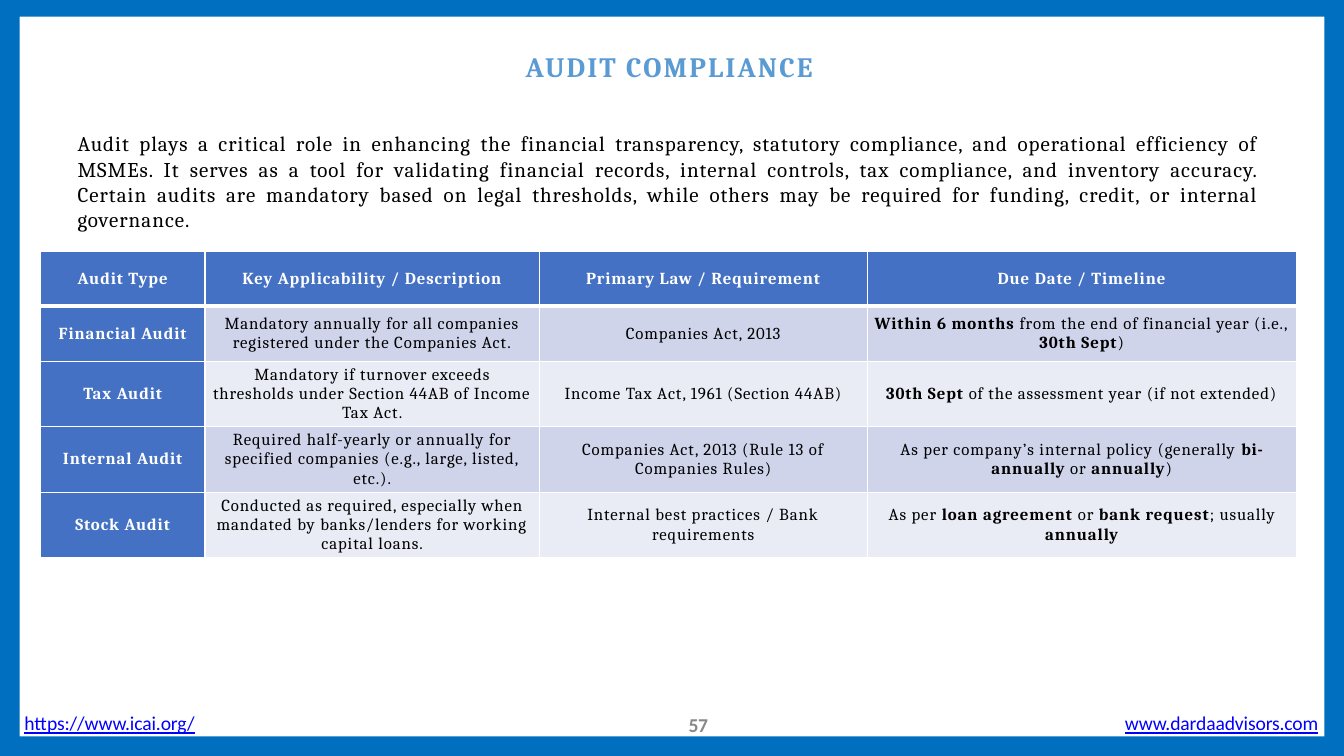
from dataclasses import dataclass

from lxml.etree import SubElement
from pptx import Presentation
from pptx.dml.color import RGBColor
from pptx.enum.shapes import MSO_SHAPE
from pptx.enum.text import MSO_ANCHOR, PP_ALIGN
from pptx.oxml.ns import qn
from pptx.shapes.autoshape import Shape
from pptx.slide import Slide
from pptx.table import _Cell
from pptx.text.text import _Paragraph
from pptx.util import Pt

FRAME_BLUE = RGBColor(0x00, 0x6F, 0xC0)
TITLE_BLUE = RGBColor(0x5B, 0x9B, 0xD4)
LINK_BLUE = RGBColor(0x00, 0x00, 0xFF)
HEADER_BLUE = RGBColor(0x44, 0x71, 0xC4)
BAND_DARK = RGBColor(0xCF, 0xD4, 0xEA)
BAND_LIGHT = RGBColor(0xE9, 0xEB, 0xF5)
GREY = RGBColor(0x88, 0x88, 0x88)
BLACK = RGBColor(0x00, 0x00, 0x00)
WHITE = RGBColor(0xFF, 0xFF, 0xFF)


@dataclass(frozen=True)
class Style:
    size: float
    color: RGBColor
    font: str = "Cambria"
    bold: bool = False
    underline: bool = False
    spacing: float = 0


@dataclass(frozen=True)
class Label:
    text: str
    left: float
    top: float
    width: float
    height: float
    style: Style
    align: PP_ALIGN = PP_ALIGN.LEFT
    wrap: bool = False
    line: float | None = None


LINK = Style(14, LINK_BLUE, "Calibri", underline=True, spacing=-0.1)
HEADING = Style(12, WHITE, bold=True, spacing=0.65)
BODY = Style(12, BLACK, spacing=0.65)

INTRO = (
    "Audit plays a critical role in enhancing the financial transparency, "
    "statutory compliance, and operational efficiency of MSMEs. It serves as a "
    "tool for validating financial records, internal controls, tax compliance, "
    "and inventory accuracy. Certain audits are mandatory based on legal "
    "thresholds, while others may be required for funding, credit, or internal "
    "governance."
)

LABELS = [
    Label("AUDIT COMPLIANCE", 375.5, 35, 230, 26,
          Style(20, TITLE_BLUE, bold=True, spacing=1.5)),
    Label("https://www.icai.org/", 17.5, 510.5, 126, 16, LINK, line=14.3),
    Label("www.dardaadvisors.com", 803.5, 510.5, 142, 16, LINK, line=14.3),
    Label("57", 491.8, 512, 18.5, 17,
          Style(14, GREY, "Calibri", bold=True, spacing=-0.2), line=14.3),
    Label(INTRO, 55.4, 93.5, 844.6, 74, Style(15, BLACK, spacing=0.75),
          PP_ALIGN.JUSTIFY, wrap=True),
]

COLUMNS = [117.4, 239, 234, 306.6]
ROW_HEIGHTS = [39.4, 39.4, 46.8, 46.8, 46.8]
AUDITS = [
    ["Audit Type", "Key Applicability / Description",
     "Primary Law / Requirement", "Due Date / Timeline"],
    ["Financial Audit",
     "Mandatory annually for all companies registered under the Companies Act.",
     "Companies Act, 2013",
     "**Within 6 months** from the end of financial year (i.e., **30th Sept**)"],
    ["Tax Audit",
     "Mandatory if turnover exceeds\nthresholds under Section 44AB of Income Tax Act.",
     "Income Tax Act, 1961 (Section 44AB)",
     "**30th Sept** of the assessment year (if not extended)"],
    ["Internal Audit",
     "Required half-yearly or annually for\n"
     "specified companies (e.g., large, listed, etc.).",
     "Companies Act, 2013 (Rule 13 of Companies Rules)",
     "As per company’s internal policy (generally **bi-**\n"
     "**annually** or **annually**)"],
    ["Stock Audit",
     "Conducted as required, especially when\n"
     "mandated by banks/lenders for working capital loans.",
     "Internal best practices / Bank requirements",
     "As per **loan agreement** or **bank request**; usually\n**annually**"],
]


def write(p: _Paragraph, text: str, style: Style) -> None:
    for i, part in enumerate(text.split("**")):
        if not part:
            continue
        r = p.add_run()
        r.text = part
        r.font.size = Pt(style.size)
        r.font.name = style.font
        r.font.bold = style.bold or i % 2 == 1
        r.font.underline = style.underline
        r.font.color.rgb = style.color
        r._r.get_or_add_rPr().set("spc", str(round(style.spacing * 100)))


def paint_frame(sp: Shape) -> None:
    sp.shadow.inherit = False
    sp.fill.solid()
    sp.fill.fore_color.rgb = FRAME_BLUE
    sp.line.fill.background()


def add_frame(s: Slide) -> None:
    paint_frame(s.shapes.add_shape(MSO_SHAPE.RECTANGLE, Pt(946), 0, Pt(14), Pt(540)))
    outline = s.shapes.build_freeform(958, 0, scale=Pt(1))
    outline.add_line_segments([
        (0, 0), (0, 540), (953, 540), (953, 526), (14, 526), (14, 11.5), (958, 11.5),
    ])
    paint_frame(outline.convert_to_shape())


def add_label(s: Slide, label: Label) -> None:
    sp = s.shapes.add_textbox(
        Pt(label.left), Pt(label.top), Pt(label.width), Pt(label.height))
    tf = sp.text_frame
    tf.word_wrap = label.wrap
    tf.margin_left = tf.margin_top = tf.margin_right = tf.margin_bottom = 0
    p = tf.paragraphs[0]
    p.alignment = label.align
    if label.line:
        p.line_spacing = Pt(label.line)
    write(p, label.text, label.style)


def set_border(cell: _Cell, side: str, width: float) -> None:
    ln = SubElement(cell._tc.get_or_add_tcPr(), qn(f"a:ln{side}"), w=str(Pt(width)))
    fill = SubElement(ln, qn("a:solidFill"))
    SubElement(fill, qn("a:srgbClr"), val=str(WHITE))


def fill_cell(cell: _Cell, text: str, row: int, column: int) -> None:
    heading = row == 0 or column == 0
    cell.margin_left = cell.margin_right = Pt(4)
    cell.margin_top = cell.margin_bottom = 0
    cell.vertical_anchor = MSO_ANCHOR.MIDDLE
    for side in "LRTB":
        under_header = (row, side) in ((0, "B"), (1, "T"))
        set_border(cell, side, 3 if under_header else 1)
    cell.fill.solid()
    band = BAND_DARK if row % 2 else BAND_LIGHT
    cell.fill.fore_color.rgb = HEADER_BLUE if heading else band
    tf = cell.text_frame
    for i, line in enumerate(text.split("\n")):
        p = tf.add_paragraph() if i else tf.paragraphs[0]
        p.alignment = PP_ALIGN.CENTER
        write(p, line, HEADING if heading else BODY)


def add_audit_table(s: Slide) -> None:
    table = s.shapes.add_table(
        len(AUDITS), len(COLUMNS), Pt(29), Pt(179.3),
        Pt(sum(COLUMNS)), Pt(sum(ROW_HEIGHTS))).table
    table.first_row = table.horz_banding = False
    for column, width in zip(table.columns, COLUMNS):
        column.width = Pt(width)
    for row, height in zip(table.rows, ROW_HEIGHTS):
        row.height = Pt(height)
    for i, texts in enumerate(AUDITS):
        for j, text in enumerate(texts):
            fill_cell(table.cell(i, j), text, i, j)


def main() -> None:
    prs = Presentation()
    prs.slide_width, prs.slide_height = Pt(960), Pt(540)
    s = prs.slides.add_slide(prs.slide_layouts[6])
    add_frame(s)
    for label in LABELS:
        add_label(s, label)
    add_audit_table(s)
    prs.save("out.pptx")


if __name__ == "__main__":
    main()
